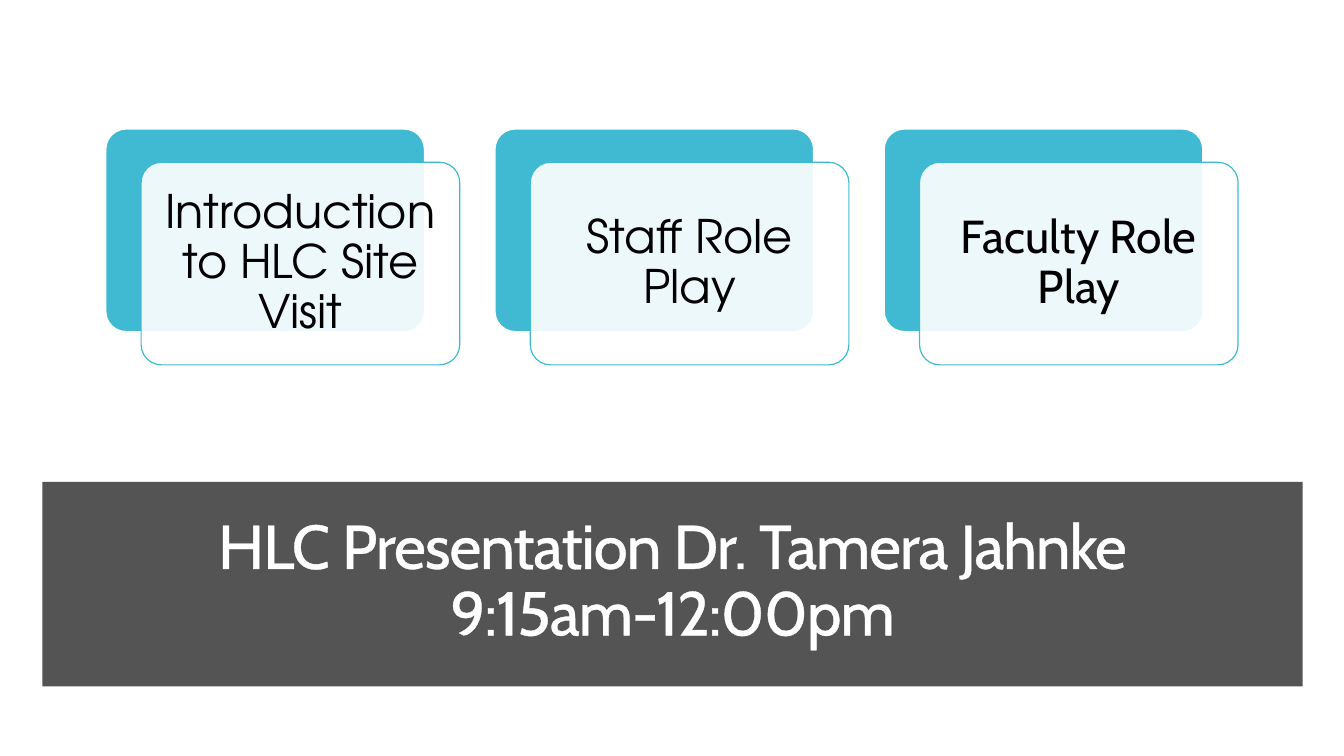
from pptx import Presentation
from pptx.dml.color import RGBColor
from pptx.enum.shapes import MSO_SHAPE as Shape
from pptx.enum.text import MSO_ANCHOR as Anchor, PP_ALIGN as Align
from pptx.oxml import parse_xml
from pptx.oxml.ns import nsdecls, qn
from pptx.util import Inches, Pt

WHITE = RGBColor(0xFF, 0xFF, 0xFF)
BLACK = RGBColor(0x00, 0x00, 0x00)
TEAL = RGBColor(0x40, 0xBA, 0xD2)
GRAY = RGBColor(0x54, 0x54, 0x54)

SESSIONS = [
    ("Introduction to HLC Site Visit", "TeX Gyre Adventor"),
    ("Staff Role Play", "TeX Gyre Adventor"),
    ("Faculty Role Play", "Cabin"),
]
CARD_PITCH = 3.86


def add_block(slide, kind, left, top, width, height, fill, line=None, opacity=None):
    block = slide.shapes.add_shape(
        kind, Inches(left), Inches(top), Inches(width), Inches(height))
    block.shadow.inherit = False
    block.fill.solid()
    block.fill.fore_color.rgb = fill
    if opacity is not None:
        color = block.fill._xPr.find(qn("a:solidFill"))[0]
        color.append(parse_xml(f'<a:alpha {nsdecls("a")} val="{opacity * 1000}"/>'))
    if line is None:
        block.line.fill.background()
    else:
        block.line.color.rgb = line
        block.line.width = Pt(0.85)
    if kind == Shape.ROUNDED_RECTANGLE:
        block.adjustments[0] = 0.1
    return block


def add_text(slide, text, left, top, width, height, font, size, color,
             inset=None, spacing=None, outline=None):
    box = slide.shapes.add_textbox(
        Inches(left), Inches(top), Inches(width), Inches(height))
    frame = box.text_frame
    frame.word_wrap = True
    frame.vertical_anchor = Anchor.MIDDLE
    if inset is not None:
        frame.margin_left = frame.margin_right = Inches(inset)
        frame.margin_top = frame.margin_bottom = Inches(inset)
    para = frame.paragraphs[0]
    para.text = text
    para.alignment = Align.CENTER
    para.line_spacing = 0.9
    for span in para.runs:
        span.font.name = font
        span.font.size = Pt(size)
        span.font.color.rgb = color
        properties = span.font._element
        if spacing is not None:
            properties.set("spc", str(round(spacing * 100)))
        if outline is not None:
            properties.insert(0, parse_xml(
                f'<a:ln {nsdecls("a")} w="{Pt(outline)}"><a:solidFill>'
                f'<a:srgbClr val="{color}"/></a:solidFill></a:ln>'))
    return box


def add_session_card(slide, left, top, text, font):
    width, height = 3.16, 2.01
    front_left, front_top, edge = left + 0.35, top + 0.33, 0.06
    add_block(slide, Shape.ROUNDED_RECTANGLE, left, top, width, height, TEAL, line=WHITE)
    add_block(slide, Shape.ROUNDED_RECTANGLE, front_left, front_top, width, height,
              WHITE, line=TEAL, opacity=90)
    add_text(slide, text, front_left + edge, front_top + edge,
             width - 2 * edge, height - 2 * edge, font, 33, BLACK, inset=0.14)


def add_title_band(slide, left, top, width, height):
    add_block(slide, Shape.RECTANGLE, left, top, width, height, GRAY)
    add_text(slide, "HLC Presentation Dr. Tamera Jahnke\v9:15am-12:00pm",
             left + 0.19, top + 0.25, width - 0.38, 1.49,
             "Cabin", 44, WHITE, spacing=-0.6, outline=1.25)


def main():
    deck = Presentation()
    deck.slide_width, deck.slide_height = Inches(13.33), Inches(7.5)
    slide = deck.slides.add_slide(deck.slide_layouts[6])
    slide.background.fill.solid()
    slide.background.fill.fore_color.rgb = WHITE
    add_title_band(slide, 0.42, 4.78, 12.5, 2.03)
    for index, (text, font) in enumerate(SESSIONS):
        add_session_card(slide, 1.05 + index * CARD_PITCH, 1.28, text, font)
    deck.save("out.pptx")


if __name__ == "__main__":
    main()
